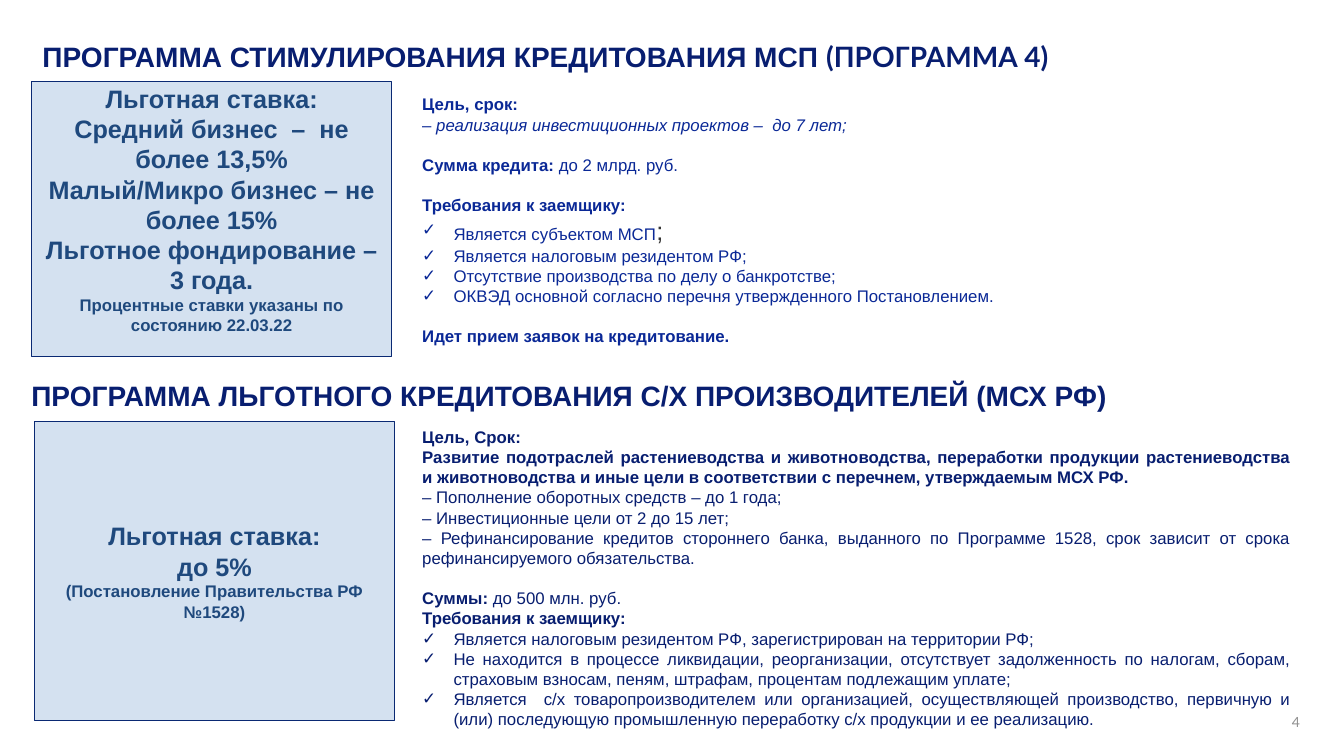
from lxml.etree import SubElement
from pptx import Presentation
from pptx.dml.color import RGBColor
from pptx.enum.shapes import MSO_SHAPE
from pptx.enum.text import MSO_ANCHOR, MSO_AUTO_SIZE, PP_ALIGN
from pptx.oxml.ns import qn
from pptx.util import Cm, Pt

NAVY = RGBColor(0x08, 0x1E, 0x70)
BLUE = RGBColor(0x0A, 0x28, 0x96)
STEEL = RGBColor(0x1F, 0x49, 0x7D)
PALE = RGBColor(0xD4, 0xE1, 0xF0)
EDGE = RGBColor(0x0A, 0x29, 0x73)
DARK = RGBColor(0x33, 0x33, 0x33)
GREY = RGBColor(0x90, 0x90, 0x90)

BOLD = {"bold": True}
PLAIN = {"bold": False}
SLANT = {"bold": False, "italic": True}
HEAD = {"size": Pt(20), "bold": True, "color": NAVY}
RATE = {"size": Pt(18), "bold": True, "color": STEEL}
NOTE = {"size": Pt(12), "bold": True, "color": STEEL}
MARK = {"size": Pt(18), "color": DARK}
PAGE = {"size": Pt(10), "name": "Lato", "color": GREY}
GAP = Pt(14.4)
HANG = Cm(0.79)
ZERO = (0, 0, 0, 0)
INSET = (Cm(0.25), Cm(0.13), Cm(0.25), Cm(0.13))
LIFT = (Cm(0.25), Cm(0.13), Cm(0.25), Cm(0.63))

HEADS = [
    ((1.07, 1.09, 28.22, 0.76), [("", [
        ("ПРОГРАММА СТИМУЛИРОВАНИЯ КРЕДИТОВАНИЯ МСП ", HEAD),
        ("(ПРОГРАММА 4)", {**HEAD, "name": "Lato"})])]),
    ((0.79, 9.63, 28.22, 0.76), [("", [
        ("ПРОГРАММА ЛЬГОТНОГО КРЕДИТОВАНИЯ С/Х ПРОИЗВОДИТЕЛЕЙ (МСХ РФ)", HEAD)])]),
]
RATES = [
    ((0.79, 2.06, 9.09, 6.93), LIFT, [
        ("", [("Льготная ставка:", RATE)]),
        ("", [("Средний бизнес  –  не более 13,5%", RATE)]),
        ("", [("Малый/Микро бизнес – не более 15%", RATE)]),
        ("", [("Льготное фондирование – 3 года.", RATE)]),
        ("", [("Процентные ставки указаны по состоянию 22.03.22", NOTE)])]),
    ((0.86, 10.62, 9.09, 7.54), INSET, [
        ("", [("Льготная ставка:", RATE)]),
        ("", [("до 5%", RATE)]),
        ("", [("(Постановление Правительства РФ №1528)", NOTE)])]),
]
TERMS = [
    ((10.39, 2.24, 22.4, 6.68), BLUE, [
        ("", [("Цель, срок:", BOLD)]),
        ("", [("– ", PLAIN), ("реализация инвестиционных проектов –  до 7 лет;", SLANT)]),
        ("gap", [("Сумма кредита: ", BOLD), ("до 2 млрд. руб.", PLAIN)]),
        ("gap", [("Требования к заемщику:", BOLD)]),
        ("tick", [("Является субъектом МСП", PLAIN), (";", MARK)]),
        ("tick", [("Является налоговым резидентом РФ;", PLAIN)]),
        ("tick", [("Отсутствие производства по делу о банкротстве;", PLAIN)]),
        ("tick", [("ОКВЭД основной согласно перечня утвержденного Постановлением.", PLAIN)]),
        ("gap", [("Идет прием заявок на кредитование.", BOLD)])]),
    ((10.39, 10.62, 22.4, 7.95), NAVY, [
        ("", [("Цель, Срок:", BOLD)]),
        ("", [("Развитие подотраслей растениеводства и животноводства, переработки "
               "продукции растениеводства и животноводства и иные цели в соответствии "
               "с перечнем, утверждаемым МСХ РФ.", BOLD)]),
        ("", [("– Пополнение оборотных средств – до 1 года;", PLAIN)]),
        ("", [("– Инвестиционные цели от 2 до 15 лет;", PLAIN)]),
        ("", [("– Рефинансирование кредитов стороннего банка, выданного по Программе "
               "1528, срок зависит от срока рефинансируемого обязательства.", PLAIN)]),
        ("gap", [("Суммы: ", BOLD), ("до 500 млн. руб.", PLAIN)]),
        ("", [("Требования к заемщику:", BOLD)]),
        ("tick", [("Является налоговым резидентом РФ, зарегистрирован на территории РФ;", PLAIN)]),
        ("tick", [("Не находится в процессе ликвидации, реорганизации, отсутствует "
                   "задолженность по налогам, сборам, страховым взносам, пеням, штрафам, "
                   "процентам подлежащим уплате;", PLAIN)]),
        ("tick", [("Является  с/х товаропроизводителем или организацией, осуществляющей "
                   "производство, первичную и (или) последующую промышленную переработку "
                   "с/х продукции и ее реализацию.", PLAIN)])]),
]
FOOT = ((25.37, 17.98, 7.39, 1.07), [("", [("4", PAGE)])])


def place(shape, area):
    """Move a shape to an area given in centimetres."""
    for side, size in zip(("left", "top", "width", "height"), area):
        setattr(shape, side, Cm(size))


def mark(para, kind):
    """Set the bullet and the indent of a paragraph."""
    props = para._p.get_or_add_pPr()
    tick = kind == "tick"
    props.set("marL", str(HANG if tick else 0))
    props.set("indent", str(-HANG if tick else 0))
    if tick:
        SubElement(props, qn("a:buChar")).set("char", "✓")
    else:
        SubElement(props, qn("a:buNone"))


def write(shape, rows, align, inset=ZERO, anchor=MSO_ANCHOR.TOP, color=NAVY, space=1.0):
    """Fill a shape with formatted paragraphs."""
    frame = shape.text_frame
    look = {"word_wrap": True, "auto_size": MSO_AUTO_SIZE.NONE, "vertical_anchor": anchor}
    sides = ("margin_left", "margin_top", "margin_right", "margin_bottom")
    for key, value in {**look, **dict(zip(sides, inset))}.items():
        setattr(frame, key, value)
    for index, (kind, runs) in enumerate(rows):
        para = frame.add_paragraph() if index else frame.paragraphs[0]
        mark(para, kind)
        form = {"alignment": align, "line_spacing": space, "space_after": Pt(0),
                "space_before": GAP if kind == "gap" else Pt(0)}
        for key, value in form.items():
            setattr(para, key, value)
        for text, style in runs:
            run = para.add_run()
            run.text = text
            font = {"name": "Arial", "size": Pt(12), "color": color, **style}
            run.font.color.rgb = font.pop("color")
            for key, value in font.items():
                setattr(run.font, key, value)


def main():
    """Build the slide on two lending programmes."""
    deck = Presentation()
    deck.slide_width, deck.slide_height = Cm(33.87), Cm(19.05)
    slide = deck.slides.add_slide(deck.slide_layouts[3])
    title, *lists = slide.placeholders
    label = slide.shapes.add_textbox(0, 0, 0, 0)
    for shape, (area, rows) in zip((title, label), HEADS):
        place(shape, area)
        write(shape, rows, PP_ALIGN.LEFT, space=0.9)
    for area, inset, rows in RATES:
        box = slide.shapes.add_shape(MSO_SHAPE.RECTANGLE, *map(Cm, area))
        box.shadow.inherit = False
        box.fill.solid()
        box.fill.fore_color.rgb = PALE
        box.line.color.rgb = EDGE
        box.line.width = Pt(0.75)
        write(box, rows, PP_ALIGN.CENTER, inset, MSO_ANCHOR.MIDDLE)
    for shape, (area, color, rows) in zip(lists, TERMS):
        place(shape, area)
        write(shape, rows, PP_ALIGN.JUSTIFY, INSET, color=color)
    area, rows = FOOT
    page = slide.shapes.add_textbox(*map(Cm, area))
    write(page, rows, PP_ALIGN.RIGHT, (Cm(0.25), 0, 0, Cm(0.13)))
    deck.save("out.pptx")


if __name__ == "__main__":
    main()
